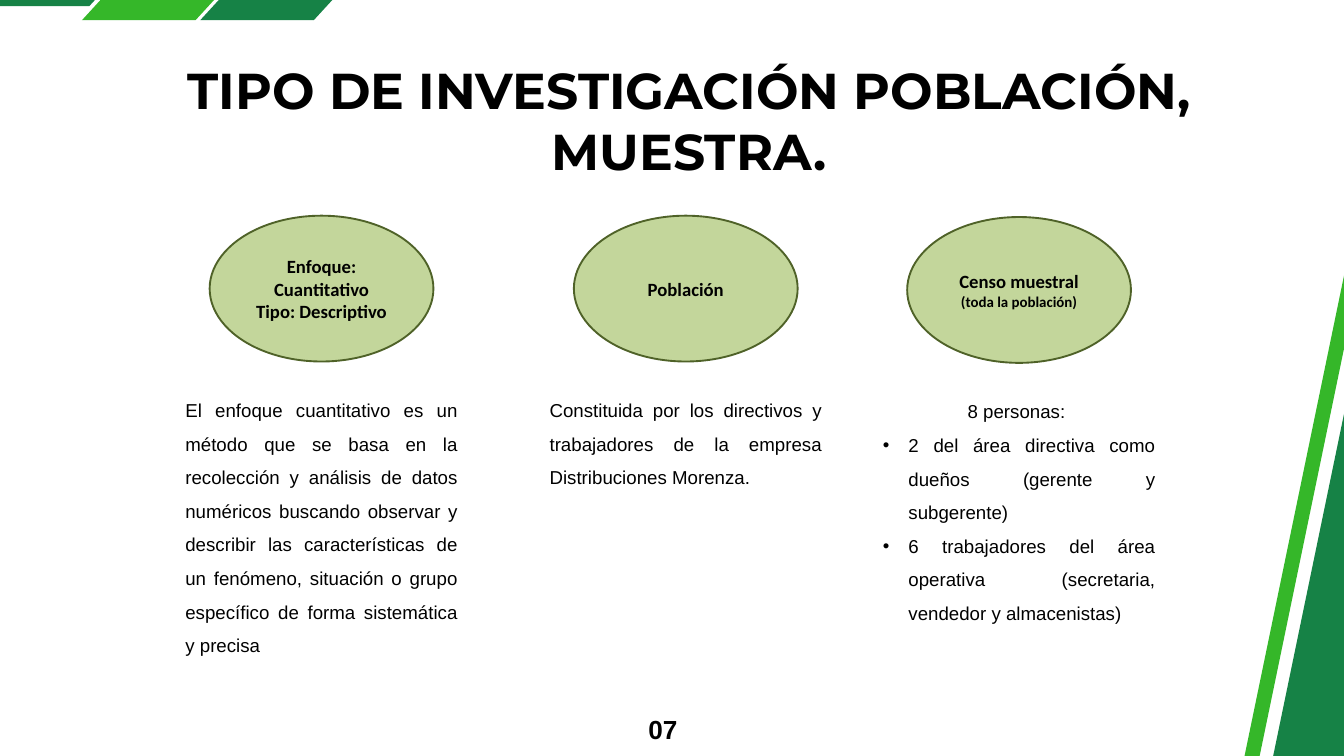
from typing import NamedTuple

from lxml.etree import SubElement
from pptx import Presentation
from pptx.dml.color import RGBColor
from pptx.enum.shapes import MSO_SHAPE
from pptx.enum.text import MSO_ANCHOR, MSO_AUTO_SIZE, PP_ALIGN
from pptx.oxml.ns import qn
from pptx.slide import Slide
from pptx.text.text import TextFrame
from pptx.util import Inches, Pt


class Theme(NamedTuple):
    black: RGBColor = RGBColor(0x00, 0x00, 0x00)
    dark_green: RGBColor = RGBColor(0x16, 0x82, 0x46)
    light_green: RGBColor = RGBColor(0x35, 0xB7, 0x29)
    oval_fill: RGBColor = RGBColor(0xC3, 0xD6, 0x9B)
    oval_line: RGBColor = RGBColor(0x4F, 0x62, 0x28)
    title_font: str = "Montserrat"
    oval_font: str = "Calibri"
    body_font: str = "Arial"
    title_size: int = 54
    number_size: int = 28
    body_size: int = 20
    note_size: int = 16


THEME = Theme()


class Line(NamedTuple):
    text: str
    align: PP_ALIGN = PP_ALIGN.JUSTIFY
    size: int = THEME.body_size
    font: str = THEME.body_font
    bold: bool = False
    spacing: float | Pt | None = 1.5
    bullet: bool = False


class Band(NamedTuple):
    color: RGBColor
    left: float
    top: float
    width: float
    height: float
    slant: float = 0
    rotation: float = 0


class Topic(NamedTuple):
    left: float
    top: float
    heading: list[Line]
    body: list[Line]
    body_height: float


def heading_line(text: str, size: int = THEME.body_size) -> Line:
    return Line(text, PP_ALIGN.CENTER, size, THEME.oval_font, True, None)


BANDS = [
    Band(THEME.dark_green, -2.63, -0.83, 4.8, 0.92, slant=0.84),
    Band(THEME.light_green, 1.22, -1.03, 2.91, 1.33, slant=1.22),
    Band(THEME.dark_green, 2.98, -1.03, 2.91, 1.33, slant=1.22),
    Band(THEME.dark_green, 13.86, 5.35, 16.41, 4.66, rotation=281.7),
    Band(THEME.light_green, 11.26, 7.12, 16.41, 0.22, rotation=281.7),
]

TOPICS = [
    Topic(
        2.66, 3.21,
        [heading_line("Enfoque: Cuantitativo"), heading_line("Tipo: Descriptivo")],
        [Line("El enfoque cuantitativo es un método que se basa en la recolección y "
              "análisis de datos numéricos buscando observar y describir las "
              "características de un fenómeno, situación o grupo específico de forma "
              "sistemática y precisa")],
        4.14,
    ),
    Topic(
        8.08, 3.21,
        [heading_line("Población")],
        [Line("Constituida por los directivos y trabajadores de la empresa "
              "Distribuciones Morenza.")],
        1.62,
    ),
    Topic(
        13.04, 3.23,
        [heading_line("Censo muestral"),
         heading_line("(toda la población)", THEME.note_size)],
        [Line("8 personas: ", PP_ALIGN.CENTER),
         Line("2 del área directiva como dueños (gerente y subgerente) ", bullet=True),
         Line("6 trabajadores del área operativa (secretaria, vendedor y almacenistas)",
              bullet=True)],
        3.64,
    ),
]


def write_lines(frame: TextFrame, lines: list[Line]) -> None:
    frame.word_wrap = True
    for index, line in enumerate(lines):
        paragraph = frame.paragraphs[0] if index == 0 else frame.add_paragraph()
        if line.bullet:
            properties = paragraph._p.get_or_add_pPr()
            properties.set("marL", str(Inches(0.38)))
            properties.set("indent", str(-Inches(0.38)))
            SubElement(properties, qn("a:buFont"), typeface="Arial")
            SubElement(properties, qn("a:buChar"), char="•")
        paragraph.alignment = line.align
        if line.spacing is not None:
            paragraph.line_spacing = line.spacing
        run = paragraph.add_run()
        run.text = line.text
        run.font.name = line.font
        run.font.size = Pt(line.size)
        run.font.bold = line.bold
        run.font.color.rgb = THEME.black


def clear_margins(frame: TextFrame) -> None:
    frame.margin_left = frame.margin_right = 0
    frame.margin_top = frame.margin_bottom = 0


def draw_band(slide: Slide, band: Band) -> None:
    right, bottom = band.left + band.width, band.top + band.height
    corners = [(Inches(x), Inches(y)) for x, y in (
        (band.left + band.slant, band.top), (right, band.top),
        (right - band.slant, bottom), (band.left, bottom))]
    builder = slide.shapes.build_freeform(*corners[0])
    builder.add_line_segments(corners[1:], close=True)
    stripe = builder.convert_to_shape()
    stripe.rotation = band.rotation
    stripe.shadow.inherit = False
    stripe.fill.solid()
    stripe.fill.fore_color.rgb = band.color
    stripe.line.fill.background()


def draw_title(slide: Slide) -> None:
    title = slide.shapes.title
    title.left, title.top = Inches(2.67), Inches(0.88)
    title.width, title.height = Inches(15.17), Inches(1.82)
    frame = title.text_frame
    clear_margins(frame)
    frame.vertical_anchor = MSO_ANCHOR.TOP
    frame.auto_size = MSO_AUTO_SIZE.NONE
    write_lines(frame, [Line("TIPO DE INVESTIGACIÓN POBLACIÓN, MUESTRA.", PP_ALIGN.CENTER,
                             THEME.title_size, THEME.title_font, True, None)])


def draw_page_number(slide: Slide) -> None:
    number = slide.shapes.add_textbox(Inches(9.52), Inches(10.54), Inches(0.56), Inches(0.5))
    clear_margins(number.text_frame)
    write_lines(number.text_frame, [Line("07", PP_ALIGN.RIGHT, THEME.number_size,
                                         bold=True, spacing=Pt(39.2))])


def draw_topic(slide: Slide, topic: Topic) -> None:
    oval = slide.shapes.add_shape(MSO_SHAPE.OVAL, Inches(topic.left + 0.46),
                                  Inches(topic.top), Inches(3.33), Inches(2.17))
    oval.shadow.inherit = False
    oval.fill.solid()
    oval.fill.fore_color.rgb = THEME.oval_fill
    oval.line.color.rgb = THEME.oval_line
    oval.line.width = Pt(2)
    oval.text_frame.vertical_anchor = MSO_ANCHOR.MIDDLE
    write_lines(oval.text_frame, topic.heading)
    body = slide.shapes.add_textbox(Inches(topic.left), Inches(topic.top + 2.51),
                                    Inches(4.25), Inches(topic.body_height))
    write_lines(body.text_frame, topic.body)


def main() -> None:
    """Build the slide on research type, population and sample."""
    deck = Presentation()
    deck.slide_width, deck.slide_height = Inches(20), Inches(11.25)
    slide = deck.slides.add_slide(deck.slide_layouts[5])
    for band in BANDS:
        draw_band(slide, band)
    draw_title(slide)
    draw_page_number(slide)
    for topic in TOPICS:
        draw_topic(slide, topic)
    deck.save("out.pptx")


if __name__ == "__main__":
    main()
